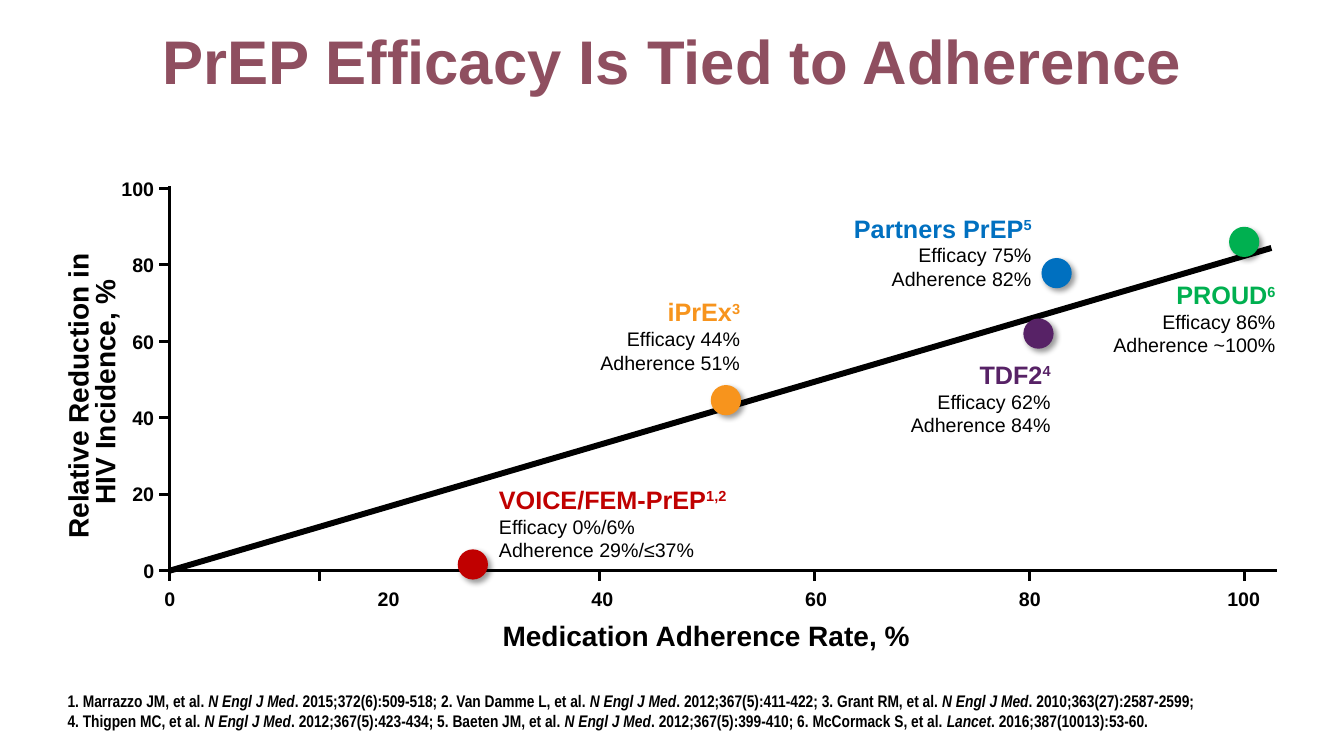
import copy
import dataclasses

import lxml.etree
import pptx
import pptx.dml.color
import pptx.enum.shapes
import pptx.enum.text
import pptx.oxml
import pptx.oxml.ns
import pptx.util

Inches, Pt = pptx.util.Inches, pptx.util.Pt
RGB = pptx.dml.color.RGBColor.from_string
ALIGN, ANCHOR = pptx.enum.text.PP_ALIGN, pptx.enum.text.MSO_ANCHOR
FIT = pptx.enum.text.MSO_AUTO_SIZE


@dataclasses.dataclass(frozen=True)
class Theme:
    font: str = "Arial"
    narrow: str = "Arial Narrow"
    ink: str = "000000"
    title: str = "8F4F60"
    orange: str = "F7941D"
    blue: str = "0070C0"
    purple: str = "572266"
    red: str = "C00000"
    green: str = "00B050"
    title_size: int = 44
    axis_size: int = 20
    study_size: int = 18
    detail_size: int = 14
    source_size: int = 12
    axis_line: float = 2.25
    trend_line: float = 4.25


theme = Theme()
presentation = pptx.Presentation()
presentation.slide_width, presentation.slide_height = Inches(13.33), Inches(7.5)
slide = presentation.slides.add_slide(presentation.slide_layouts[5])


def write(shape, place, runs, align, anchor=ANCHOR.TOP, insets=(0, 0), spacing=None,
          wrap=False, fit=FIT.SHAPE_TO_FIT_TEXT):
    """Place a text shape; each run is (text, size, colour, format values)."""
    shape.left, shape.top, shape.width, shape.height = map(Inches, place)
    side, end = map(Inches, insets)
    frame_format = {"word_wrap": wrap, "auto_size": fit, "vertical_anchor": anchor,
                    "margin_left": side, "margin_right": side,
                    "margin_top": end, "margin_bottom": end}
    for name, value in frame_format.items():
        setattr(shape.text_frame, name, value)
    paragraph = shape.text_frame.paragraphs[0]
    paragraph.alignment = align
    if spacing:
        paragraph.line_spacing = spacing
    for text, size, colour, extra in runs:
        font_format = {"name": theme.font, "size": Pt(size), "bold": True} | extra
        raised = font_format.pop("raised", False)
        for index, line in enumerate(text.split("\n")):
            if index:
                paragraph.add_line_break()
                paragraph._p[-1].append(copy.deepcopy(run._r.rPr))
            if not line:
                continue
            run = paragraph.add_run()
            run.text = line
            for name, value in font_format.items():
                setattr(run.font, name, value)
            run.font.color.rgb = RGB(colour)
            if raised:
                run._r.rPr.set("baseline", "30000")


def draw_line(x1, y1, x2, y2, width=theme.axis_line):
    line = slide.shapes.add_connector(pptx.enum.shapes.MSO_CONNECTOR.STRAIGHT,
                                      Inches(x1), Inches(y1), Inches(x2), Inches(y2))
    line.line.color.rgb = RGB(theme.ink)
    line.line.width = Pt(width)
    lxml.etree.SubElement(line._element.spPr, pptx.oxml.ns.qn("a:effectLst"))


# Title
write(slide.shapes.title, (0.67, 0.29, 12, 0.73),
      [("PrEP Efficacy Is Tied to Adherence", theme.title_size, theme.title, {})],
      ALIGN.CENTER, insets=(0, 0.05), spacing=0.85, wrap=True)

# Sources
sources = [
    ("1. Marrazzo JM, et al. ", "N Engl J Med", ". 2015;372(6):509-518; "),
    ("2. Van Damme L, et al. ", "N Engl J Med", ". 2012;367(5):411-422; "),
    ("3. Grant RM, et al. ", "N Engl J Med", ". 2010;363(27):2587-2599; \n"),
    ("4. Thigpen MC, et al. ", "N Engl J Med", ". 2012;367(5):423-434; "),
    ("5. Baeten JM, et al. ", "N Engl J Med", ". 2012;367(5):399-410; "),
    ("6. McCormack S, et al. ", "Lancet", ". 2016;387(10013):53-60."),
]
source_runs = [(text, theme.source_size, theme.ink,
                {"name": theme.narrow, "italic": part == 1})
               for source in sources for part, text in enumerate(source)]
write(slide.shapes.add_textbox(0, 0, 0, 0), (0.67, 6.85, 12, 0.4), source_runs,
      ALIGN.LEFT, ANCHOR.BOTTOM, wrap=True)

# Axis titles
axis_titles = [
    ("Relative Reduction in \nHIV Incidence, %", (-0.53, 3.62, 2.93, 0.54), 270, 0.8),
    ("Medication Adherence Rate, %", (4.92, 6.14, 4.17, 0.34), 0, None),
]
for text, place, turn, spacing in axis_titles:
    axis_title = slide.shapes.add_textbox(0, 0, 0, 0)
    write(axis_title, place, [(text, theme.axis_size, theme.ink, {})],
          ALIGN.CENTER, spacing=spacing)
    axis_title.rotation = turn

# Axes with ticks and values
origin_x, origin_y, tick = 1.68, 5.66, 0.1
draw_line(origin_x, origin_y, origin_x, 1.85)
draw_line(1.66, origin_y, 12.67, origin_y)
tick_xs = [origin_x, 3.17] + [5.95 + 2.13 * step for step in range(4)]
value_xs = [origin_x] + [3.85 + 2.12 * step for step in range(5)]
for step, (tick_x, value_x) in enumerate(zip(tick_xs, value_xs)):
    tick_y = origin_y - 0.758 * step
    draw_line(origin_x, tick_y, origin_x - tick, tick_y)
    draw_line(tick_x, origin_y + tick, tick_x, origin_y)
    value = [(str(20 * step), theme.detail_size, theme.ink, {})]
    for place, align in [((1.03, tick_y - 0.12, 0.5, 0.24), ALIGN.RIGHT),
                         ((value_x - 0.28, 5.82, 0.57, 0.24), ALIGN.CENTER)]:
        write(slide.shapes.add_textbox(0, 0, 0, 0), place, value, align,
              ANCHOR.MIDDLE, wrap=True, fit=FIT.NONE)

# Trend line
draw_line(1.69, origin_y, 12.61, 2.46, theme.trend_line)

# Studies: name, references, details, colour, dot corner, label place, alignment
studies = [
    ("iPrEx", "3", "Efficacy 44%\nAdherence 51%", theme.orange,
     (7.05, 3.82), (5.84, 2.88, 1.6, 0.88), ALIGN.RIGHT),
    ("Partners PrEP", "5", "Efficacy 75%\nAdherence 82%", theme.blue,
     (10.33, 2.56), (8.34, 2.05, 1.99, 0.88), ALIGN.RIGHT),
    ("TDF2", "4", "Efficacy 62%\nAdherence 84%", theme.purple,
     (10.15, 3.16), (8.92, 3.5, 1.6, 0.88), ALIGN.RIGHT),
    ("VOICE/FEM-PrEP", "1,2", "Efficacy 0%/6%\nAdherence 29%/≤37%", theme.red,
     (4.54, 5.45), (4.85, 4.74, 2.51, 0.88), ALIGN.LEFT),
    ("PROUD", "6", "Efficacy 86%\nAdherence ~100%", theme.green,
     (12.19, 2.25), (10.93, 2.71, 1.82, 0.88), ALIGN.RIGHT),
]
dot_shadow = pptx.oxml.parse_xml(
    f'<a:outerShdw {pptx.oxml.ns.nsdecls("a")} blurRad="{Pt(4)}" dist="{Pt(3)}" '
    f'dir="2700000" algn="tl" rotWithShape="0"><a:srgbClr val="{theme.ink}">'
    '<a:alpha val="40000"/></a:srgbClr></a:outerShdw>')
for name, references, details, colour, (dot_x, dot_y), place, align in studies:
    dot = slide.shapes.add_shape(pptx.enum.shapes.MSO_SHAPE.OVAL, Inches(dot_x),
                                 Inches(dot_y), Inches(0.3), Inches(0.3))
    dot.fill.solid()
    dot.fill.fore_color.rgb = RGB(colour)
    dot.line.fill.background()
    dot.shadow.inherit = False
    effects = dot._element.spPr.find(pptx.oxml.ns.qn("a:effectLst"))
    effects.append(copy.deepcopy(dot_shadow))
    write(slide.shapes.add_textbox(0, 0, 0, 0), place,
          [(name, theme.study_size, colour, {}),
           (references + "\n", theme.study_size, colour, {"raised": True}),
           (details, theme.detail_size, theme.ink, {"bold": False})],
          align, ANCHOR.BOTTOM, insets=(0.1, 0.05))

presentation.save("out.pptx")
